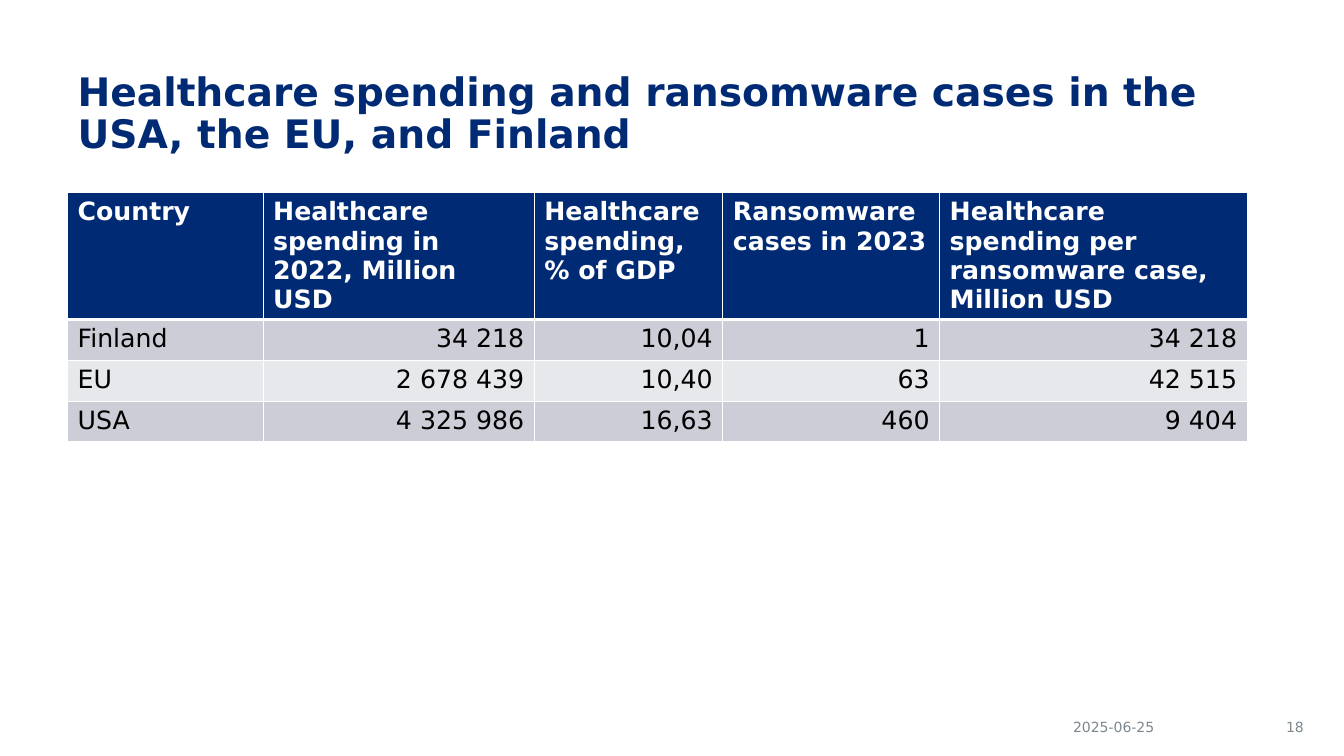
import dataclasses
from typing import Any

import lxml.etree
import pptx
import pptx.dml.color
import pptx.enum.text
import pptx.oxml.ns
import pptx.util

Inches = pptx.util.Inches
Align = pptx.enum.text.PP_ALIGN
Anchor = pptx.enum.text.MSO_ANCHOR

NAVY, WHITE, BLACK, GREY = "002B74", "FFFFFF", "000000", "7C878E"
BANDS = ("CCCDD6", "E7E8EB")
COLUMN_WIDTHS = (1.94, 2.69, 1.87, 2.15, 3.05)
HEADER_HEIGHT, ROW_HEIGHT = 1.26, 0.405
ROWS = (
    ("Country", "Healthcare spending in 2022, Million USD", "Healthcare spending, % of GDP",
     "Ransomware cases in 2023", "Healthcare spending per ransomware case, Million USD"),
    ("Finland", "34 218", "10,04", "1", "34 218"),
    ("EU", "2 678 439", "10,40", "63", "42 515"),
    ("USA", "4 325 986", "16,63", "460", "9 404"),
)


@dataclasses.dataclass(frozen=True)
class TextStyle:
    size: float
    color: str
    bold: bool = False
    align: Any = Align.LEFT


@dataclasses.dataclass(frozen=True)
class FooterItem:
    text: str
    left: float
    width: float
    align: Any


FOOTER = (
    FooterItem("2025-06-25", 10.02, 2.05, Align.CENTER),
    FooterItem("18", 12.36, 0.67, Align.RIGHT),
)


def rgb(color: str) -> pptx.dml.color.RGBColor:
    return pptx.dml.color.RGBColor.from_string(color)


def place(shape: Any, left: float, top: float, width: float, height: float) -> None:
    lengths = {"left": left, "top": top, "width": width, "height": height}
    for name, value in lengths.items():
        setattr(shape, name, Inches(value))


def write(frame: Any, text: str, style: TextStyle) -> Any:
    """Fill the first paragraph of a text frame and return it."""
    frame.word_wrap = True
    para = frame.paragraphs[0]
    para.alignment = style.align
    span = para.add_run()
    span.text = text
    formats = {"name": "DejaVu Sans", "size": pptx.util.Pt(style.size), "bold": style.bold}
    for name, value in formats.items():
        setattr(span.font, name, value)
    span.font.color.rgb = rgb(style.color)
    return para


def add_borders(cell: Any, bottom: float, top: float) -> None:
    """Draw white cell borders, which must precede the cell fill."""
    properties = cell._tc.get_or_add_tcPr()
    qn = pptx.oxml.ns.qn
    for side, points in {"lnL": 1, "lnR": 1, "lnT": top, "lnB": bottom}.items():
        line = lxml.etree.SubElement(properties, qn(f"a:{side}"), w=str(pptx.util.Pt(points)))
        fill = lxml.etree.SubElement(line, qn("a:solidFill"))
        lxml.etree.SubElement(fill, qn("a:srgbClr"), val=WHITE)


def add_title(page: Any) -> None:
    title = page.shapes.title
    place(title, 0.67, 0.67, 11.75, 1.21)
    title.text_frame.vertical_anchor = Anchor.TOP
    title.text_frame.auto_size = pptx.enum.text.MSO_AUTO_SIZE.NONE
    para = write(title.text_frame, "Healthcare spending and ransomware cases in the USA, the EU, and Finland",
                 TextStyle(28, NAVY, bold=True))
    para.line_spacing = 0.9


def add_spending_table(page: Any) -> None:
    height = HEADER_HEIGHT + ROW_HEIGHT * (len(ROWS) - 1)
    table = page.shapes.add_table(len(ROWS), len(COLUMN_WIDTHS), Inches(0.67), Inches(1.91),
                                  Inches(sum(COLUMN_WIDTHS)), Inches(height)).table
    for column, width in zip(table.columns, COLUMN_WIDTHS):
        column.width = Inches(width)
    for row, texts in enumerate(ROWS):
        header = row == 0
        table.rows[row].height = Inches(HEADER_HEIGHT if header else ROW_HEIGHT)
        for column, text in enumerate(texts):
            cell = table.cell(row, column)
            add_borders(cell, bottom=3 if header else 1, top=3 if row == 1 else 1)
            cell.fill.solid()
            cell.fill.fore_color.rgb = rgb(NAVY if header else BANDS[(row - 1) % 2])
            align = Align.LEFT if header or column == 0 else Align.RIGHT
            write(cell.text_frame, text, TextStyle(18, WHITE if header else BLACK, header, align))


def add_footer(page: Any) -> None:
    for item in FOOTER:
        box = page.shapes.add_textbox(0, 0, 0, 0)
        place(box, item.left, 7.07, item.width, 0.28)
        box.text_frame.vertical_anchor = Anchor.MIDDLE
        write(box.text_frame, item.text, TextStyle(10, GREY, align=item.align))


def main() -> None:
    deck = pptx.Presentation()
    deck.slide_width, deck.slide_height = Inches(13.33), Inches(7.5)
    page = deck.slides.add_slide(deck.slide_layouts.get_by_name("Title Only"))
    add_title(page)
    add_spending_table(page)
    add_footer(page)
    deck.save("out.pptx")


if __name__ == "__main__":
    main()
